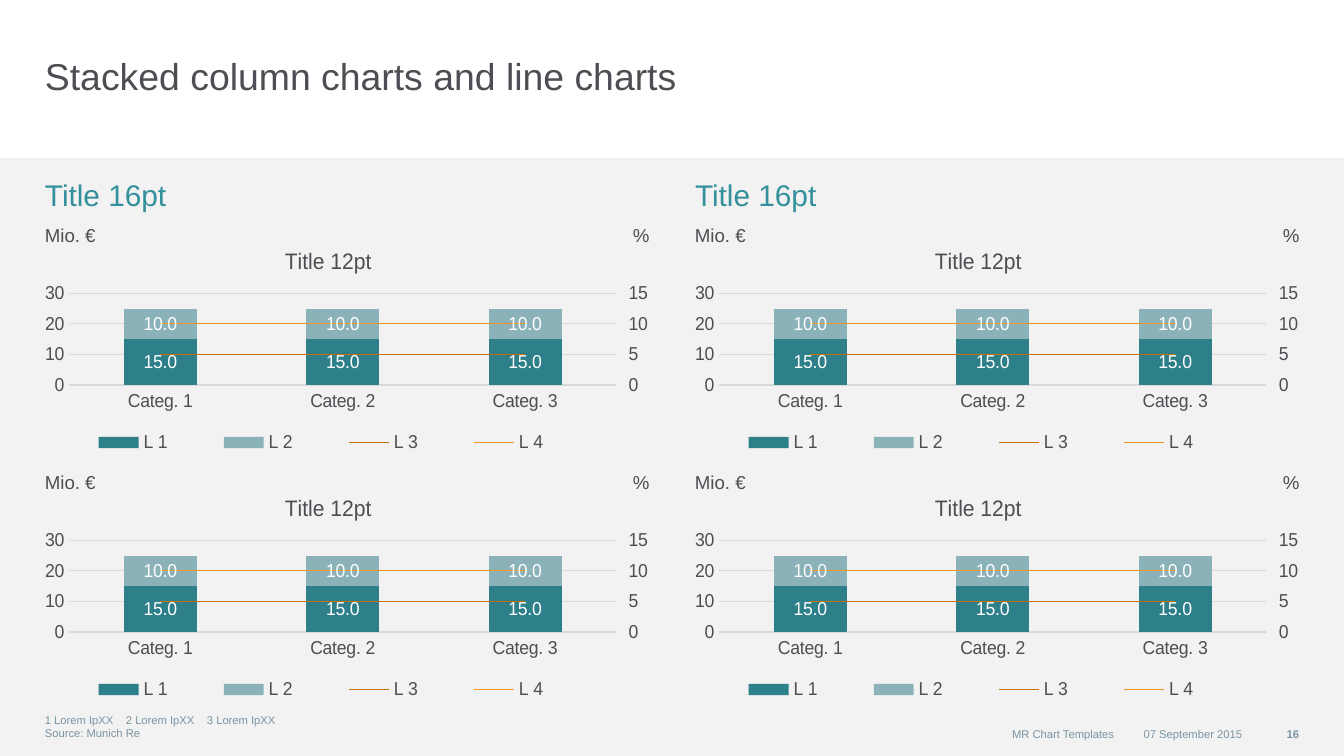
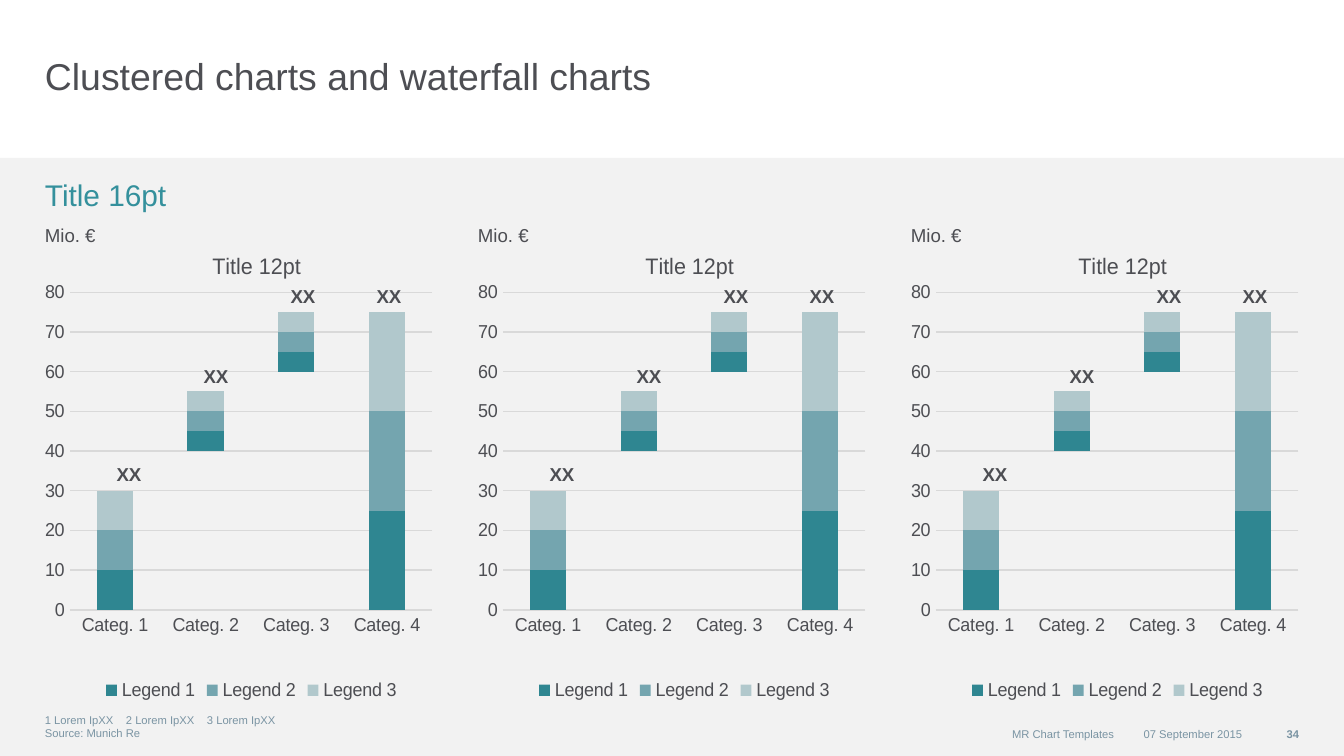
from lxml import etree
from pptx import Presentation
from pptx.chart.data import CategoryChartData
from pptx.dml.color import RGBColor
from pptx.enum.chart import XL_CHART_TYPE, XL_LEGEND_POSITION, XL_TICK_MARK
from pptx.enum.shapes import MSO_SHAPE
from pptx.enum.text import MSO_ANCHOR, MSO_AUTO_SIZE, PP_ALIGN
from pptx.oxml import parse_xml
from pptx.oxml.ns import nsdecls, qn
from pptx.util import Pt

EMU_PER_PX = 914400 / 134.4
SLIDE_W, SLIDE_H = 1344, 756
MARGIN = 45
BAND_TOP = 158
CHART_TOP = 224
FOOTER_TOP = 719
BLANK_LAYOUT = 6
FONT = "Arial"

WHITE = RGBColor(0xFF, 0xFF, 0xFF)
BAND_GREY = RGBColor(0xF2, 0xF2, 0xF2)
TEXT_GREY = RGBColor(0x4D, 0x4E, 0x53)
FOOTER_BLUE = RGBColor(0x7A, 0x94, 0xA3)
HEADING_TEAL = RGBColor(0x34, 0x90, 0x9C)
GRID_GREY = RGBColor(0xD9, 0xD9, 0xD9)
COLUMN_COLORS = (RGBColor(0x2D, 0x7F, 0x8A), RGBColor(0x8B, 0xB2, 0xB9))
LINE_COLORS = (RGBColor(0xC8, 0x70, 0x07), RGBColor(0xF7, 0x94, 0x1D))
STEP_COLORS = (
    RGBColor(0x2F, 0x86, 0x91),
    RGBColor(0x74, 0xA5, 0xAF),
    RGBColor(0xB1, 0xC8, 0xCC),
)

LEFT, CENTER, RIGHT = PP_ALIGN.LEFT, PP_ALIGN.CENTER, PP_ALIGN.RIGHT
TOP, MIDDLE, BOTTOM = MSO_ANCHOR.TOP, MSO_ANCHOR.MIDDLE, MSO_ANCHOR.BOTTOM
FIT_SHAPE = MSO_AUTO_SIZE.SHAPE_TO_FIT_TEXT
RECTANGLE = MSO_SHAPE.RECTANGLE
STACKED = XL_CHART_TYPE.COLUMN_STACKED
LEGEND_BOTTOM = XL_LEGEND_POSITION.BOTTOM
NO_TICK = XL_TICK_MARK.NONE

FOOTNOTES = "1 Lorem IpXX\t2 Lorem IpXX\t3 Lorem IpXX\nSource: Munich Re"
FOOTNOTE_TABS = (81, 162)
COMBO_SERIES = (
    ("L 1", (15, 15, 15)),
    ("L 2", (10, 10, 10)),
    ("L 3", (5, 5, 5)),
    ("L 4", (10, 10, 10)),
)
STEP_VALUES = (10, 5, 5, 25)
WATERFALL_SERIES = (
    ("Series 1", (0, 40, 60, None)),
    ("Legend 1", STEP_VALUES),
    ("Legend 2", STEP_VALUES),
    ("Legend 3", STEP_VALUES),
)
TOTAL_OFFSETS = ((71, 236), (158, 138), (245, 58), (331, 58))


def px(length):
    """Turn pixels into EMU."""
    return round(length * EMU_PER_PX)


def add_tabs(paragraph, stops):
    """Give a paragraph left tab stops, in px."""
    tab_list = etree.SubElement(paragraph._p.get_or_add_pPr(), qn("a:tabLst"))
    for stop in stops:
        etree.SubElement(tab_list, qn("a:tab"), pos=str(px(stop)), algn="l")


def add_text(slide, text, x, y, w, h, *, size=10, color=TEXT_GREY, bold=False,
             align=LEFT, anchor=TOP, wrap=True, bottom_inset=0,
             line_spacing=None, space_after=None, tabs=()):
    """Add a text box with one paragraph per line of text."""
    box = slide.shapes.add_textbox(px(x), px(y), px(w), px(h))
    frame = box.text_frame
    frame.margin_left = frame.margin_right = frame.margin_top = 0
    frame.margin_bottom = px(bottom_inset)
    frame.word_wrap = wrap
    frame.vertical_anchor = anchor
    if not wrap:
        frame.auto_size = FIT_SHAPE
    frame.text = text
    for paragraph in frame.paragraphs:
        if tabs:
            add_tabs(paragraph, tabs)
        paragraph.alignment = align
        paragraph.line_spacing = line_spacing
        paragraph.space_after = space_after
        for run in paragraph.runs:
            run.font.name = FONT
            run.font.size = Pt(size)
            run.font.bold = bold
            run.font.color.rgb = color


def add_heading(slide, x, w):
    """Add a teal heading above the charts."""
    add_text(slide, "Title 16pt", x, 177, w, 47, size=16, color=HEADING_TEAL,
             space_after=Pt(6))


def add_unit(slide, unit, x, y, w, align=LEFT):
    """Add the unit of a value axis."""
    add_text(slide, unit, x, y, w, 23, align=align, wrap=False)


def add_base(prs, title, number):
    """Add a slide with band, title, footnotes and footer."""
    slide = prs.slides.add_slide(prs.slide_layouts[BLANK_LAYOUT])
    band = slide.shapes.add_shape(
        RECTANGLE, 0, px(BAND_TOP), px(SLIDE_W), px(SLIDE_H - BAND_TOP))
    band.shadow.inherit = False
    band.fill.solid()
    band.fill.fore_color.rgb = BAND_GREY
    band.line.fill.background()
    add_text(slide, title, MARGIN, 53, 1005, 82, size=20)
    footer = (
        ("MR Chart Templates", 584, 530, False),
        ("07 September 2015", 1120, 122, False),
        (number, 1242, 57, True),
    )
    for text, x, w, bold in footer:
        add_text(slide, text, x, FOOTER_TOP, w, 30, size=6, color=FOOTER_BLUE,
                 bold=bold, align=RIGHT, anchor=MIDDLE)
    add_text(slide, FOOTNOTES, MARGIN, FOOTER_TOP, 530, 21, size=6,
             color=FOOTER_BLUE, anchor=BOTTOM, tabs=FOOTNOTE_TABS)
    return slide


def set_layout(parent, index, x, y, w=None, h=None, inner=False):
    """Place a chart part by fractions of the chart."""
    for old in parent.findall(qn("c:layout")):
        parent.remove(old)
    layout = etree.Element(qn("c:layout"))
    manual = etree.SubElement(layout, qn("c:manualLayout"))
    settings = {"layoutTarget": "inner" if inner else None,
                "xMode": "edge", "yMode": "edge", "x": x, "y": y, "w": w, "h": h}
    for tag, value in settings.items():
        if value is not None:
            etree.SubElement(manual, qn(f"c:{tag}"), val=str(value))
    parent.insert(index, layout)


def add_stacked_chart(slide, series, box, scale, title_at, plot_at, legend_at):
    """Add a stacked column chart with title, axes and legend."""
    data = CategoryChartData()
    data.categories = [f"Categ. {i + 1}" for i in range(len(series[0][1]))]
    for name, values in series:
        data.add_series(name, values)
    chart = slide.shapes.add_chart(STACKED, *map(px, box), data).chart
    chart.font.name = FONT
    chart.font.size = Pt(10)
    chart.font.color.rgb = TEXT_GREY

    chart.has_title = True
    title_frame = chart.chart_title.text_frame
    title_frame.text = "Title 12pt"
    title_font = title_frame.paragraphs[0].runs[0].font
    title_font.name = FONT
    title_font.size = Pt(12)
    title_font.bold = False
    title_font.color.rgb = TEXT_GREY

    chart.has_legend = True
    chart.legend.position = LEGEND_BOTTOM
    chart.legend.include_in_layout = False

    columns = chart.plots[0]
    columns.gap_width = 150
    columns.overlap = 100
    columns.vary_by_categories = False
    category_axis, value_axis = chart.category_axis, chart.value_axis
    for axis in (category_axis, value_axis):
        axis.major_tick_mark = axis.minor_tick_mark = NO_TICK
    value_axis.minimum_scale = 0
    value_axis.maximum_scale = scale
    value_axis.major_unit = 10
    value_axis.has_major_gridlines = True
    value_axis.format.line.fill.background()
    for line in (category_axis.format.line, value_axis.major_gridlines.format.line):
        line.color.rgb = GRID_GREY
        line.width = Pt(0.75)

    parts = chart.element.find(qn("c:chart"))
    set_layout(parts.find(qn("c:title")), 1, *title_at)
    set_layout(parts.find(qn("c:plotArea")), 0, *plot_at, inner=True)
    set_layout(parts.find(qn("c:legend")), 1, *legend_at)
    return chart


def fill_series(series, color):
    """Give a column series a plain fill."""
    series.format.fill.solid()
    series.format.fill.fore_color.rgb = color


def move_to_lines(chart, line_series):
    """Move series into a line chart on a right axis."""
    plot_area = chart.element.find(qn("c:chart")).find(qn("c:plotArea"))
    lines = parse_xml(
        f'<c:lineChart {nsdecls("c")}><c:grouping val="standard"/>'
        '<c:varyColors val="0"/><c:marker val="1"/>'
        '<c:axId val="5001"/><c:axId val="5002"/></c:lineChart>')
    for index, series in enumerate(line_series):
        element = series._element
        for invert in element.findall(qn("c:invertIfNegative")):
            element.remove(invert)
        marker = etree.Element(qn("c:marker"))
        etree.SubElement(marker, qn("c:symbol"), val="none")
        element.find(qn("c:spPr")).addnext(marker)
        etree.SubElement(element, qn("c:smooth"), val="0")
        lines.insert(2 + index, element)
    plot_area.find(qn("c:barChart")).addnext(lines)
    right_axis = parse_xml(
        f'<c:valAx {nsdecls("c", "a")}><c:axId val="5002"/>'
        '<c:scaling><c:orientation val="minMax"/><c:max val="15"/><c:min val="0"/>'
        '</c:scaling><c:delete val="0"/><c:axPos val="r"/>'
        '<c:numFmt formatCode="General" sourceLinked="0"/>'
        '<c:majorTickMark val="out"/><c:minorTickMark val="none"/>'
        '<c:tickLblPos val="nextTo"/>'
        '<c:spPr><a:ln><a:noFill/></a:ln></c:spPr>'
        '<c:crossAx val="5001"/><c:crosses val="max"/>'
        '<c:crossBetween val="between"/><c:majorUnit val="5"/></c:valAx>')
    hidden_axis = parse_xml(
        f'<c:catAx {nsdecls("c")}><c:axId val="5001"/>'
        '<c:scaling><c:orientation val="minMax"/></c:scaling>'
        '<c:delete val="1"/><c:axPos val="b"/><c:crossAx val="5002"/>'
        '<c:crosses val="autoZero"/></c:catAx>')
    plot_area.find(qn("c:valAx")).addnext(right_axis)
    right_axis.addnext(hidden_axis)


def add_combo_chart(slide, x, y):
    """Add stacked columns with two lines and both units."""
    chart = add_stacked_chart(
        slide, COMBO_SERIES, (x, y, 603, 239), 30, (0.41, 0.08),
        (0.037, 0.29, 0.963, 0.384), (0, 0.85, 0.96, 0.13))
    series = list(chart.plots[0].series)
    for column, color in zip(series[:2], COLUMN_COLORS):
        fill_series(column, color)
        labels = column.data_labels
        labels.show_value = True
        labels.number_format = "#,##0.0"
        labels.number_format_is_linked = False
        labels.font.name = FONT
        labels.font.size = Pt(10)
        labels.font.color.rgb = WHITE
    for line, color in zip(series[2:], LINE_COLORS):
        line.format.line.color.rgb = color
        line.format.line.width = Pt(0.75)
    move_to_lines(chart, series[2:])
    add_unit(slide, "Mio. €", x, y, 51)
    add_unit(slide, "%", x + 588, y, 16, RIGHT)


def add_waterfall_chart(slide, x):
    """Add a waterfall of stacked steps with totals above."""
    chart = add_stacked_chart(
        slide, WATERFALL_SERIES, (x, CHART_TOP, 388, 485), 80, (0.4, 0.05),
        (0.028, 0.141, 0.972, 0.655), (0.11, 0.94, 0.81, 0.06))
    hidden_base, *steps = chart.plots[0].series
    hidden_base.format.fill.background()
    for step, color in zip(steps, STEP_COLORS):
        fill_series(step, color)
    base_entry = etree.Element(qn("c:legendEntry"))
    etree.SubElement(base_entry, qn("c:idx"), val="0")
    etree.SubElement(base_entry, qn("c:delete"), val="1")
    chart.element.find(qn("c:chart")).find(qn("c:legend")).insert(1, base_entry)
    add_unit(slide, "Mio. €", x, CHART_TOP, 51)
    for dx, dy in TOTAL_OFFSETS:
        add_text(slide, "XX", x + dx, CHART_TOP + dy, 26, 32, bold=True,
                 align=CENTER, anchor=BOTTOM, wrap=False, bottom_inset=7,
                 line_spacing=1.1)


def main():
    """Build both chart slides."""
    prs = Presentation()
    prs.slide_width, prs.slide_height = px(SLIDE_W), px(SLIDE_H)

    combos = add_base(prs, "Stacked column charts and line charts", "16")
    for column in range(2):
        x = MARGIN + 650 * column
        add_heading(combos, x, 604)
        for row in range(2):
            add_combo_chart(combos, x, CHART_TOP + 247 * row)

    waterfalls = add_base(prs, "Clustered charts and waterfall charts", "34")
    add_heading(waterfalls, MARGIN, 1254)
    for column in range(3):
        add_waterfall_chart(waterfalls, MARGIN + 433 * column)

    prs.save("out.pptx")


if __name__ == "__main__":
    main()
